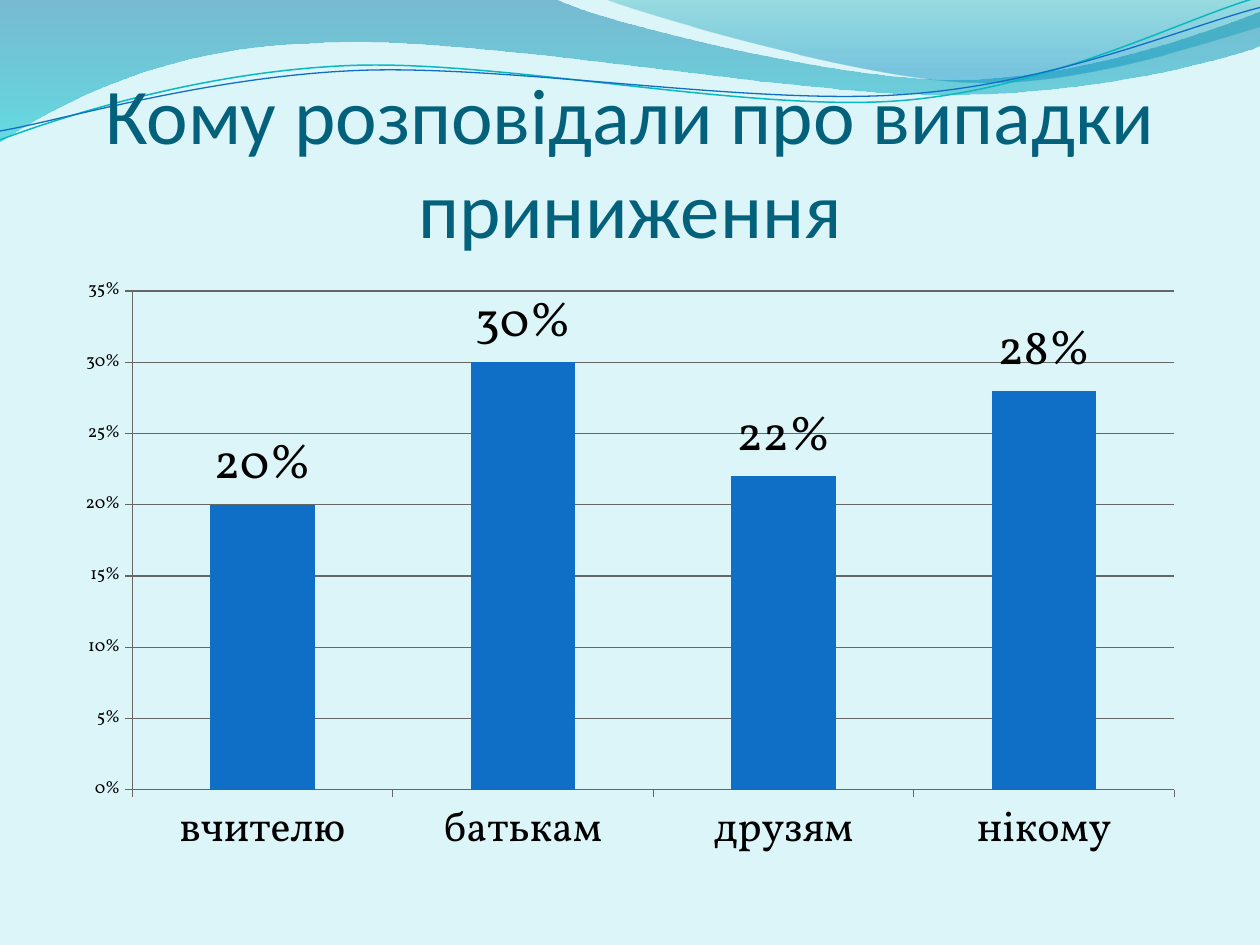
from math import cos, radians, sin

from lxml.etree import SubElement
from pptx import Presentation
from pptx.chart.data import CategoryChartData
from pptx.dml.color import RGBColor
from pptx.enum.chart import XL_CHART_TYPE as ChartType
from pptx.enum.chart import XL_LABEL_POSITION as LabelPosition
from pptx.enum.chart import XL_TICK_MARK as TickMark
from pptx.enum.text import MSO_ANCHOR as Anchor
from pptx.enum.text import PP_ALIGN as Align
from pptx.oxml.ns import qn
from pptx.util import Inches, Pt

PALE = RGBColor(0xDB, 0xF5, 0xF9)
NAVY_TEAL = RGBColor(0x04, 0x61, 0x7B)
BLUE = RGBColor(0x0F, 0x6F, 0xC6)
TEAL = RGBColor(0x0A, 0xB8, 0xBF)
GREY = RGBColor(0x66, 0x66, 0x66)
BLACK = RGBColor(0, 0, 0)
DEEP_BLUE = RGBColor(0x00, 0x74, 0xA1)
CYAN = RGBColor(0x00, 0xC6, 0xCF)
SEA_GREEN = RGBColor(0x00, 0xA1, 0xA9)
SKY_BLUE = RGBColor(0x00, 0x8B, 0xBF)
STRAND_TILT = -2.7

WAVES = [
    ([(0, 0), (4.4, -0.01), (4.76, 0.17, 6.64, 0.63, 7.58, 0.63),
      (8.53, 0.63, 9.58, 0.26, 10, 0.09), (10.01, 0.36),
      (9.83, 0.44, 8.7, 0.76, 7.46, 0.75), (6.22, 0.75, 3.82, 0.28, 2.57, 0.34),
      (1.29, 0.36, 0.46, 0.83, -0.01, 1.13), (0, 0)],
     [(0, DEEP_BLUE, 45), (1, CYAN, 55)]),
    ([(4.79, -0.01), (5.09, 0.11, 6.82, 0.62, 7.69, 0.65),
      (8.56, 0.69, 9.61, 0.32, 10, 0.21), (10, 0), (4.79, -0.01)],
     [(0, SEA_GREEN, 30), (0.8, SKY_BLUE, 45)]),
]
STRANDS = [
    ([(0, 1.11), (0.48, 0.93, 1.58, 0.57, 2.77, 0.52),
      (3.95, 0.47, 5.93, 0.89, 7.13, 0.8), (8.33, 0.71, 9.38, 0.15, 9.98, -0.02)],
     (4.99, 0.58), TEAL, 0.85),
    ([(0, 1.04), (0.47, 0.96, 1.64, 0.61, 2.83, 0.56),
      (4.03, 0.51, 5.97, 0.84, 7.17, 0.75), (8.36, 0.67, 9.41, 0.21, 10, 0.06)],
     (5, 0.59), BLUE, 0.75),
]


def turn(point, center, degrees):
    """Turn a point clockwise around a center."""
    dx, dy = point[0] - center[0], point[1] - center[1]
    c, s = cos(radians(degrees)), sin(radians(degrees))
    return center[0] + dx * c - dy * s, center[1] + dx * s + dy * c


def add_curve(slide, left, top, segments, close, center=(0, 0), tilt=0):
    """Draw line segments (2 numbers) and cubic curves (6) from a corner."""
    nodes = [turn(segment[i:i + 2], center, -tilt)
             for segment in segments for i in range(0, len(segment), 2)]
    points = [(left + Inches(x), top + Inches(y)) for x, y in nodes]
    builder = slide.shapes.build_freeform(*points[0])
    builder.add_line_segments(points[1:], close=close)
    shape = builder.convert_to_shape()
    shape.rotation = tilt
    shape.shadow.inherit = False
    lines = iter(list(shape._element.spPr.iter(qn("a:lnTo"))))
    for segment in segments[1:]:
        line = next(lines)
        if len(segment) == 6:
            line.tag = qn("a:cubicBezTo")
            for extra in (next(lines), next(lines)):
                line.append(extra[0])
                extra.getparent().remove(extra)
    return shape


def fill_gradient(shape, stops):
    """Fill a shape from top to bottom with translucent colours."""
    shape.fill.gradient()
    shape.fill.gradient_angle = 270
    for stop, (position, color, opacity) in zip(shape.fill.gradient_stops, stops):
        stop.position = position
        stop.color.rgb = color
    colors = shape._element.spPr.iter(qn("a:srgbClr"))
    for element, (position, color, opacity) in zip(list(colors), stops):
        SubElement(element, qn("a:alpha")).set("val", str(opacity * 1000))


def add_header(slide, left, top):
    """Draw the waves and the thin strands across the top."""
    for segments, stops in WAVES:
        wave = add_curve(slide, left, top, segments, close=True)
        fill_gradient(wave, stops)
        wave.line.fill.background()
    for segments, center, color, width in STRANDS:
        strand = add_curve(slide, left, top, segments, False, center, STRAND_TILT)
        strand.fill.background()
        strand.line.color.rgb = color
        strand.line.width = Pt(width)


def set_font(font, size, color=BLACK, name="Vollkorn"):
    """Set the size, colour and typeface of a font."""
    font.size = Pt(size)
    font.color.rgb = color
    font.name = name
    font.bold = False


def add_text(slide, box, text, align=Align.CENTER, anchor=Anchor.BOTTOM, **font):
    """Place one paragraph of wrapped text in a box."""
    frame = slide.shapes.add_textbox(*box).text_frame
    frame.word_wrap = True
    frame.vertical_anchor = anchor
    frame.margin_left = frame.margin_right = frame.margin_bottom = 0
    frame.margin_top = Inches(0.05)
    paragraph = frame.paragraphs[0]
    paragraph.alignment = align
    run = paragraph.add_run()
    run.text = text
    set_font(run.font, **font)


def add_answer_chart(slide, box):
    """Place the column chart of answers."""
    data = CategoryChartData(number_format="0%")
    data.categories = ["вчителю", "батькам", "друзям", "нікому"]
    data.add_series("Series 1", [0.2, 0.3, 0.22, 0.28])
    chart = slide.shapes.add_chart(ChartType.COLUMN_CLUSTERED, *box, data).chart
    chart.has_legend = False
    chart.has_title = False
    set_font(chart.font, 10)

    for axis, size in ((chart.category_axis, 24), (chart.value_axis, 10)):
        axis.major_tick_mark = TickMark.OUTSIDE
        axis.minor_tick_mark = TickMark.NONE
        axis.format.line.color.rgb = GREY
        axis.format.line.width = Pt(0.75)
        set_font(axis.tick_labels.font, size)
    values = chart.value_axis
    values.minimum_scale, values.maximum_scale, values.major_unit = 0, 0.35, 0.05
    values.tick_labels.number_format = "0%"
    values.tick_labels.number_format_is_linked = False
    values.has_major_gridlines = True
    values.major_gridlines.format.line.color.rgb = GREY
    values.major_gridlines.format.line.width = Pt(0.75)

    plot = chart.plots[0]
    plot.gap_width = 150
    plot.vary_by_categories = False
    series = plot.series[0]
    series.format.fill.solid()
    series.format.fill.fore_color.rgb = BLUE
    labels = series.data_labels
    labels.show_value = True
    labels.number_format = "0%"
    labels.number_format_is_linked = False
    labels.position = LabelPosition.OUTSIDE_END
    set_font(labels.font, 28)


def main():
    """Build and save the slide."""
    presentation = Presentation()
    presentation.slide_width, presentation.slide_height = Inches(10), Inches(7.5)
    slide = presentation.slides.add_slide(presentation.slide_layouts[6])
    slide.background.fill.solid()
    slide.background.fill.fore_color.rgb = PALE

    left, width = Inches(0.5), Inches(9)
    add_header(slide, Inches(0), Inches(0))
    add_text(slide, (left, Inches(0.77), width, Inches(1.25)),
             "Кому розповідали про випадки приниження",
             size=45, color=NAVY_TEAL, name="Calibri")
    add_answer_chart(slide, (left, Inches(2.12), width, Inches(4.8)))
    presentation.save("out.pptx")


if __name__ == "__main__":
    main()
